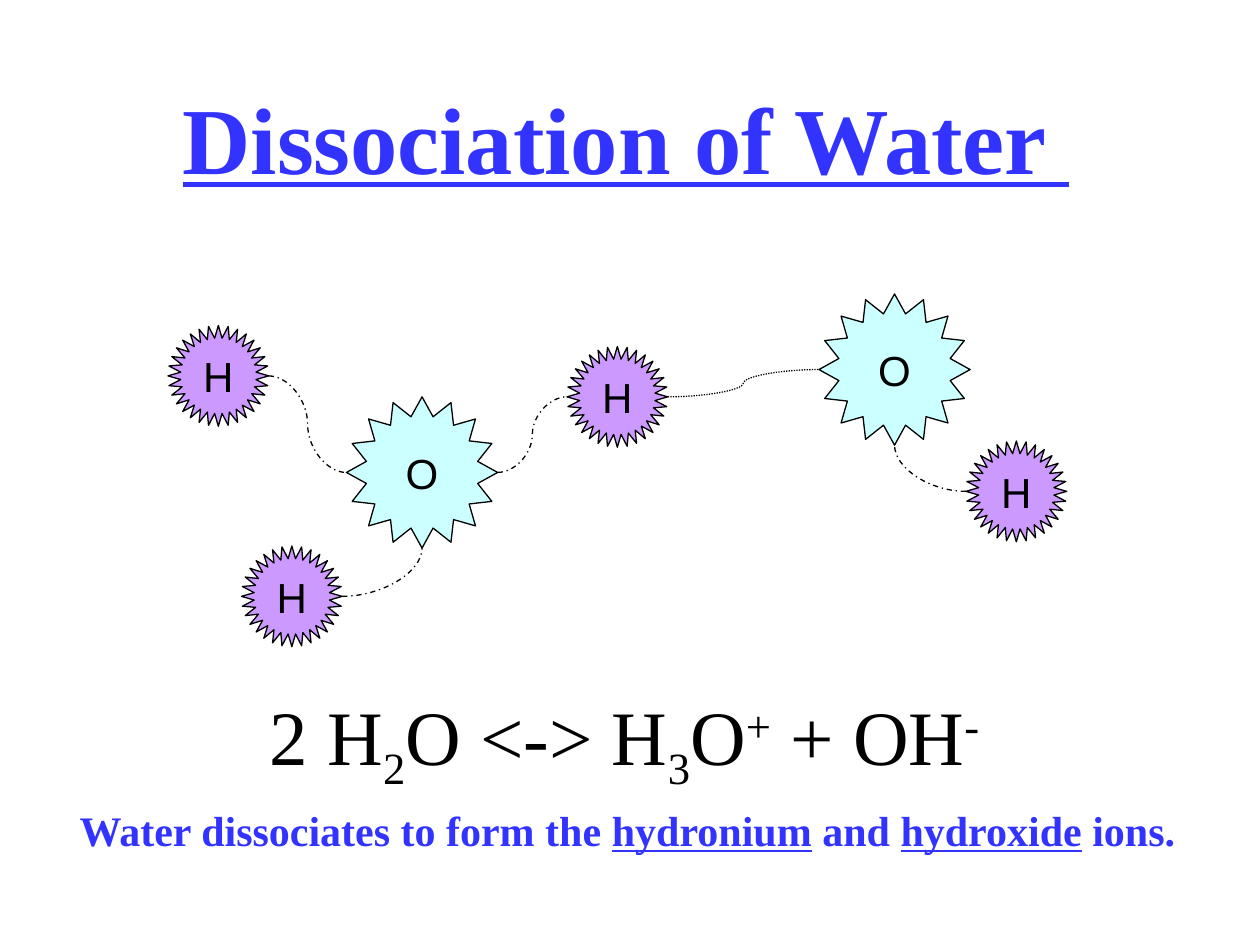
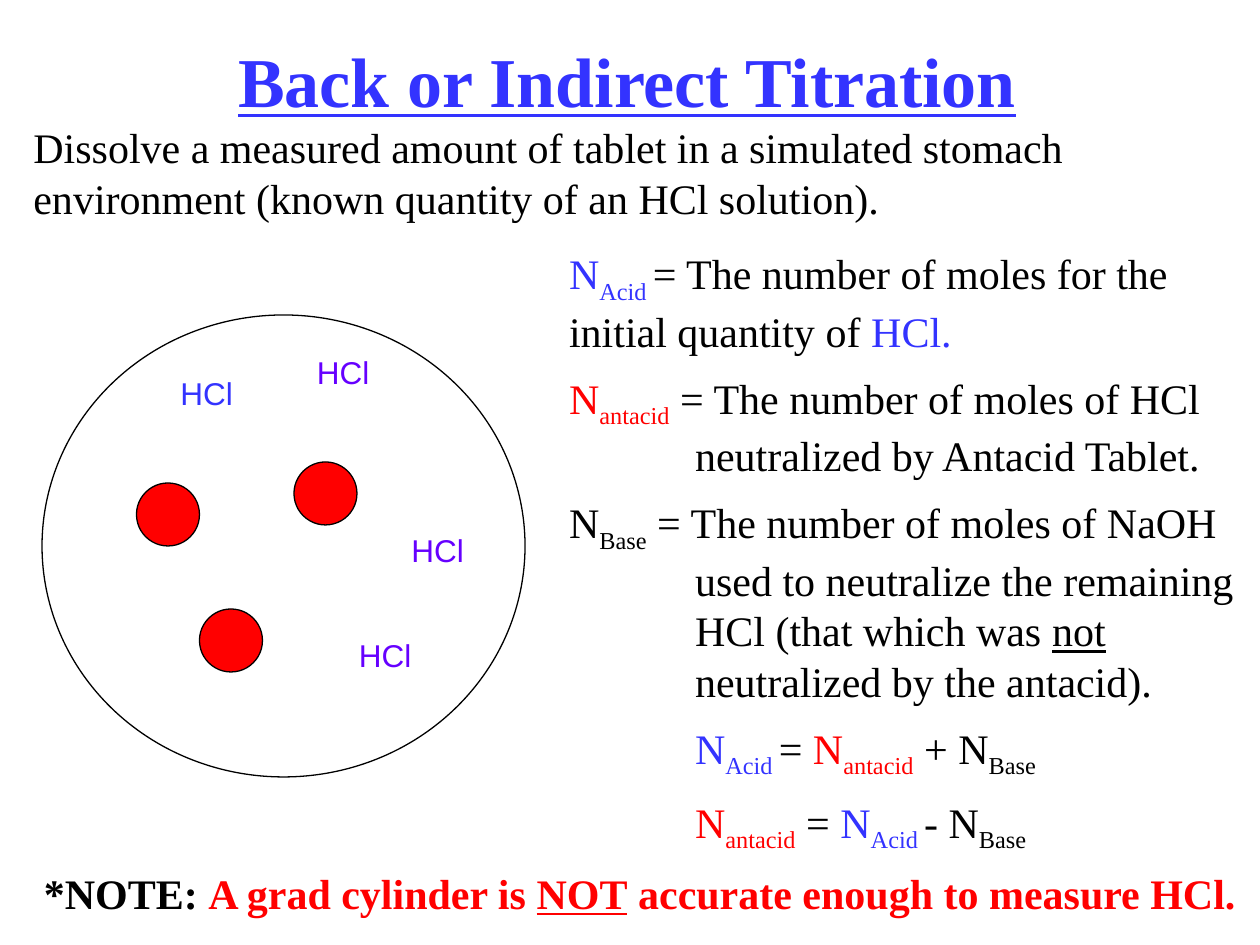
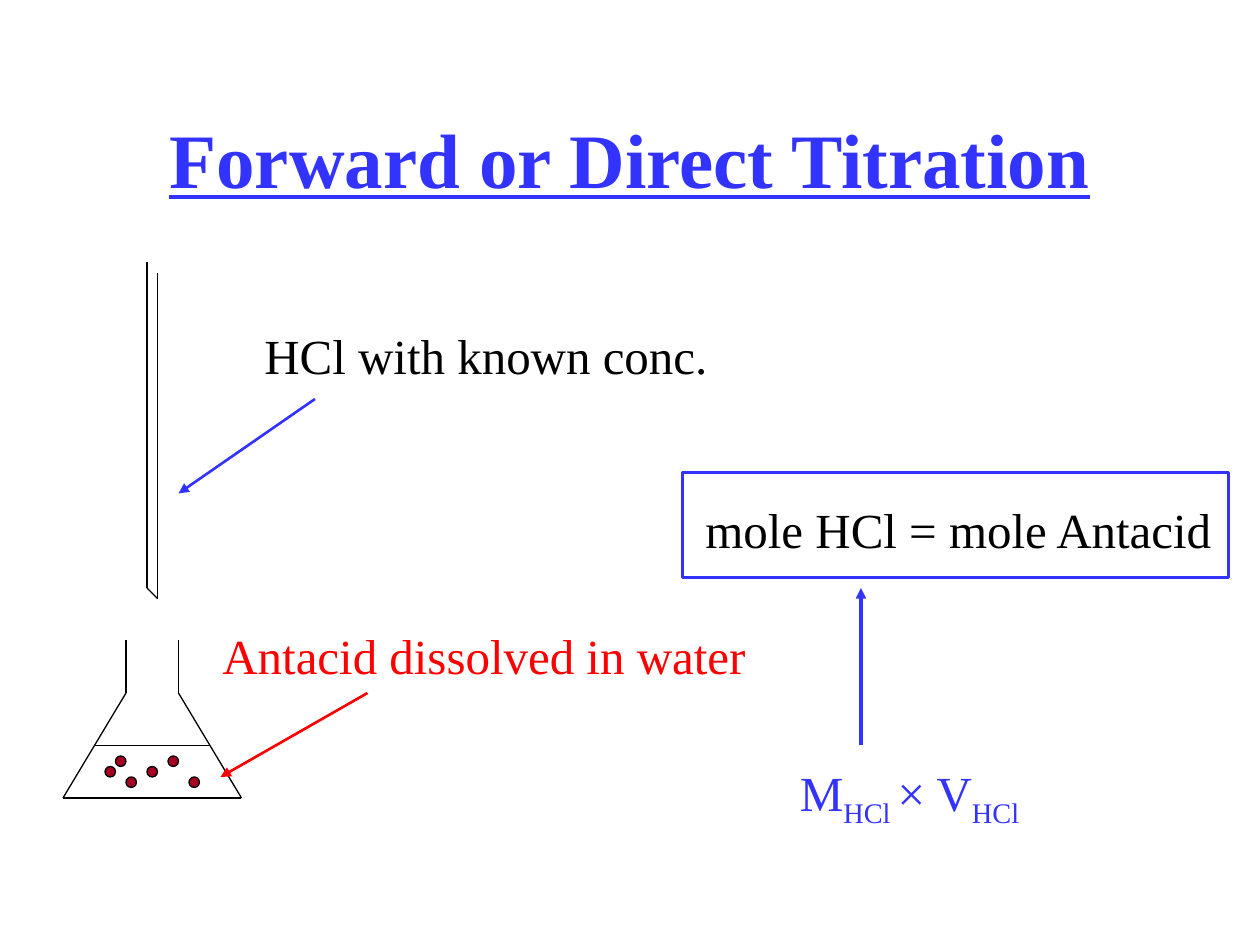
from dataclasses import dataclass

from lxml import etree
from pptx import Presentation
from pptx import util as u
from pptx.dml.color import RGBColor
from pptx.enum import dml, shapes, text
from pptx.oxml.ns import qn


@dataclass(frozen=True)
class Theme:
    serif: str = "Times New Roman"
    sans: str = "Arial"
    label: int = 18
    body: int = 24
    callout: int = 28
    thin: float = 0.75
    arrow: float = 1.5
    frame: float = 2
    gap: float = 9.6


THEME = Theme()
COLORS = {
    "black": "000000", "blue": "3333FF", "red": "FF0000", "violet": "6600FF",
    "hydrogen": "CC99FF", "oxygen": "CCFFFF", "antacid": "A50021",
}
SCRIPTS = {"sub": -25000, "sup": 30000}
CELLS_PER_INCH = 12

TITLES = {
    "water": ("Dissociation of Water ", 54, (16.2, 7, 87.7, 12), "LEFT"),
    "back": ("Back or Indirect Titration", 40, (21.5, 3, 77, 9.2), "LEFT"),
    "forward": ("Forward or Direct Titration", 44, (13, 10, 94, 10), "CENTER"),
}

ELEMENTS = {
    "H": (9.6, "hydrogen", shapes.MSO_SHAPE.STAR_32_POINT),
    "O": (14.4, "oxygen", shapes.MSO_SHAPE.STAR_16_POINT),
}
ATOMS = {
    "lower H": ("H", 23, 52),
    "right H": ("H", 92, 42),
    "shared H": ("H", 54, 33),
    "upper H": ("H", 16, 31),
    "left O": ("O", 33, 37.8),
    "right O": ("O", 78, 28),
}
SIDES = {"left": (0, 0.5), "right": (1, 0.5), "bottom": (0.5, 1)}
BONDS = [
    ("upper H", "right", "left O", "left", "DASH_DOT"),
    ("lower H", "right", "left O", "bottom", "DASH_DOT"),
    ("left O", "right", "shared H", "left", "DASH_DOT"),
    ("shared H", "right", "right O", "left", "ROUND_DOT"),
    ("right H", "left", "right O", "bottom", "DASH_DOT"),
]
EQUATION = ["2 H", ("2", "sub"), "O <-> H", ("3", "sub"), "O", ("+", "sup"),
            " + OH", ("-", "sup")]
IONS = ["Water dissociates to form the ", ("hydronium", "underline"), " and ",
        ("hydroxide", "underline"), " ions."]

PROCEDURE = ["Dissolve a measured amount of tablet in a simulated stomach "
             "environment (known quantity of an HCl solution)."]
STOMACH = (4, 30, 46, 44)
TABLET_SIZE = 6
TABLETS = [(13, 46), (19, 58), (28, 44)]
ACID_LABELS = [(29, 33, "violet"), (38, 50, "violet"), (33, 60, "violet"),
               (16, 35, "blue")]
N_ACID = [("N", "blue"), ("Acid ", "blue", "sub")]
N_ANTACID = [("N", "red"), ("antacid", "red", "sub")]
N_BASE = ["N", ("Base", "sub")]
MOLES = [
    (0, 0, N_ACID + ["= The number of moles for the initial quantity of ", ("HCl.", "blue")]),
    (1, -1, N_ANTACID + [" = The number of moles of HCl neutralized by Antacid Tablet."]),
    (1, -1, N_BASE + [" = The number of moles of NaOH used to neutralize the remaining "
                      "HCl (that which was ", ("not", "underline"),
                      " neutralized by the antacid)."]),
    (1, 0, N_ACID + ["= "] + N_ANTACID + [" + "] + N_BASE),
    (1, 0, N_ANTACID + [" = "] + N_ACID + ["- "] + N_BASE),
]
NOTE = ["*NOTE: ", ("A grad cylinder is ", "red"), ("NOT", "red", "underline"),
        (" accurate enough to measure HCl.", "red")]

GLASSWARE = [
    [(12, 61), (12, 66), (6, 76), (23, 76), (17, 66), (17, 61)],
    [(14, 25), (14, 56), (15, 57), (15, 26)],
    [(9, 71), (20, 71)],
]
GRAIN_SIZE = 1
GRAINS = [(14, 73), (10, 73), (16, 72), (18, 74), (11, 72), (12, 74)]
ARROWS = [
    ((35, 66), (21, 74), "red", THEME.arrow),
    ((30, 38), (17, 47), "blue", THEME.arrow),
    ((82, 71), (82, 56), "blue", THEME.frame),
]
CALLOUTS = [
    ((20, 59, 52.2, 6.8), "red", ["Antacid dissolved in water"]),
    ((24, 30.4, 44.6, 6.8), "black", ["HCl with known conc."]),
    ((66, 47, 51, 6.8), "black", ["mole HCl = mole Antacid"]),
    ((75, 72, 25.4, 6.8), "blue", ["M", ("HCl ", "sub"), "× V", ("HCl", "sub")]),
]
MOLE_FRAME = (65, 45, 52, 10)


def cells(*counts):
    return [u.Inches(count / CELLS_PER_INCH) for count in counts]


def rgb(color):
    return RGBColor.from_string(COLORS[color])


def place(shape, box):
    shape.left, shape.top, shape.width, shape.height = cells(*box)


def write(paragraph, runs, size, color="black", face=THEME.serif, bold=False, underline=False):
    font = paragraph.font
    font.name, font.size, font.bold, font.underline = face, u.Pt(size), bold, underline
    font.color.rgb = rgb(color)
    for item in runs:
        words, *styles = (item,) if isinstance(item, str) else item
        run = paragraph.add_run()
        run.text = words
        for style in styles:
            if style in SCRIPTS:
                run._r.get_or_add_rPr().set("baseline", str(SCRIPTS[style]))
            elif style == "underline":
                run.font.underline = True
            else:
                run.font.color.rgb = rgb(style)


def set_frame(frame, wrap):
    frame.word_wrap = wrap
    frame.auto_size = text.MSO_AUTO_SIZE.NONE
    frame.vertical_anchor = text.MSO_ANCHOR.TOP


def add_text(slide, box, runs, size, wrap=False, **style):
    frame = slide.shapes.add_textbox(*cells(*box)).text_frame
    set_frame(frame, wrap)
    write(frame.paragraphs[0], runs, size, **style)


def add_titled_slide(deck, key, layout):
    slide = deck.slides.add_slide(deck.slide_layouts.get_by_name(layout))
    words, size, box, alignment = TITLES[key]
    title = slide.shapes.title
    place(title, box)
    set_frame(title.text_frame, alignment == "CENTER")
    heading = title.text_frame.paragraphs[0]
    heading.alignment = text.PP_ALIGN[alignment]
    write(heading, [words], size, color="blue", bold=True, underline=True)
    return slide


def add_outlined(slide, preset, box, fill=None, line="black", width=THEME.thin):
    shape = slide.shapes.add_shape(preset, *cells(*box))
    shape.shadow.inherit = False
    if fill:
        shape.fill.solid()
        shape.fill.fore_color.rgb = rgb(fill)
    else:
        shape.fill.background()
    shape.line.color.rgb = rgb(line)
    shape.line.width = u.Pt(width)
    return shape


def add_line(slide, start, end, color="black", width=THEME.thin, curve=False, dash=None,
             arrow=False):
    kind = shapes.MSO_CONNECTOR.CURVE if curve else shapes.MSO_CONNECTOR.STRAIGHT
    line = slide.shapes.add_connector(kind, *cells(*start, *end))
    line.line.color.rgb = rgb(color)
    line.line.width = u.Pt(width)
    if dash:
        line.line.dash_style = dml.MSO_LINE[dash]
    properties = line._element.spPr
    if arrow:
        etree.SubElement(properties.find(qn("a:ln")), qn("a:tailEnd"), type="triangle")
    etree.SubElement(properties, qn("a:effectLst"))
    return line


def bond_point(atom, side):
    element, left, top = ATOMS[atom]
    size = ELEMENTS[element][0]
    across, down = SIDES[side]
    return left + across * size, top + down * size


def build_water(deck):
    slide = add_titled_slide(deck, "water", "Title Only")
    for element, left, top in ATOMS.values():
        size, fill, star = ELEMENTS[element]
        frame = add_outlined(slide, star, (left, top, size, size), fill).text_frame
        set_frame(frame, False)
        frame.vertical_anchor = text.MSO_ANCHOR.MIDDLE
        symbol = frame.paragraphs[0]
        symbol.alignment = text.PP_ALIGN.CENTER
        write(symbol, [element], THEME.body, face=THEME.sans)
    for first, first_side, second, second_side, dash in BONDS:
        bond = add_line(slide, bond_point(first, first_side), bond_point(second, second_side),
                        curve=True, dash=dash)
        if second_side == "bottom":
            bond._element.spPr.find(qn("a:prstGeom")).set("prst", "curvedConnector2")
    add_text(slide, (24.5, 65, 71, 10), EQUATION, 44)
    add_text(slide, (6.4, 76, 107.2, 6), IONS, THEME.body, color="blue", bold=True)


def build_back_titration(deck):
    slide = add_titled_slide(deck, "back", "Title and Content")
    add_text(slide, (2, 11, 116, 10.8), PROCEDURE, THEME.body, wrap=True)
    oval = shapes.MSO_SHAPE.OVAL
    add_outlined(slide, oval, STOMACH)
    for left, top, color in ACID_LABELS:
        add_text(slide, (left, top, 7.4, 4.8), ["HCl"], THEME.label, color=color, face=THEME.sans)
    for left, top in TABLETS:
        add_outlined(slide, oval, (left, top, TABLET_SIZE, TABLET_SIZE), "red")
    moles = slide.placeholders[1]
    place(moles, (53, 23, 67, 55.6))
    frame = moles.text_frame
    set_frame(frame, True)
    for index, (margin, indent, runs) in enumerate(MOLES):
        paragraph = frame.add_paragraph() if index else frame.paragraphs[0]
        paragraph.space_before = u.Pt(THEME.gap if index else 0)
        properties = paragraph._p.get_or_add_pPr()
        properties.set("marL", str(u.Inches(margin)))
        properties.set("indent", str(u.Inches(indent)))
        etree.SubElement(properties, qn("a:buNone"))
        write(paragraph, runs, THEME.body)
    add_text(slide, (3, 82, 116.3, 6), NOTE, THEME.body, bold=True)


def build_forward_titration(deck):
    slide = add_titled_slide(deck, "forward", "Title Only")
    for outline in GLASSWARE:
        for start, end in zip(outline, outline[1:]):
            add_line(slide, start, end)
    for left, top in GRAINS:
        add_outlined(slide, shapes.MSO_SHAPE.OVAL, (left, top, GRAIN_SIZE, GRAIN_SIZE), "antacid")
    for start, end, color, width in ARROWS:
        add_line(slide, start, end, color, width, arrow=True)
    for box, color, runs in CALLOUTS:
        add_text(slide, box, runs, THEME.callout, color=color)
    add_outlined(slide, shapes.MSO_SHAPE.RECTANGLE, MOLE_FRAME, line="blue", width=THEME.frame)


def main():
    deck = Presentation()
    deck.slide_width, deck.slide_height = u.Inches(10), u.Inches(7.5)
    build_water(deck)
    build_back_titration(deck)
    build_forward_titration(deck)
    deck.save("out.pptx")


if __name__ == "__main__":
    main()
